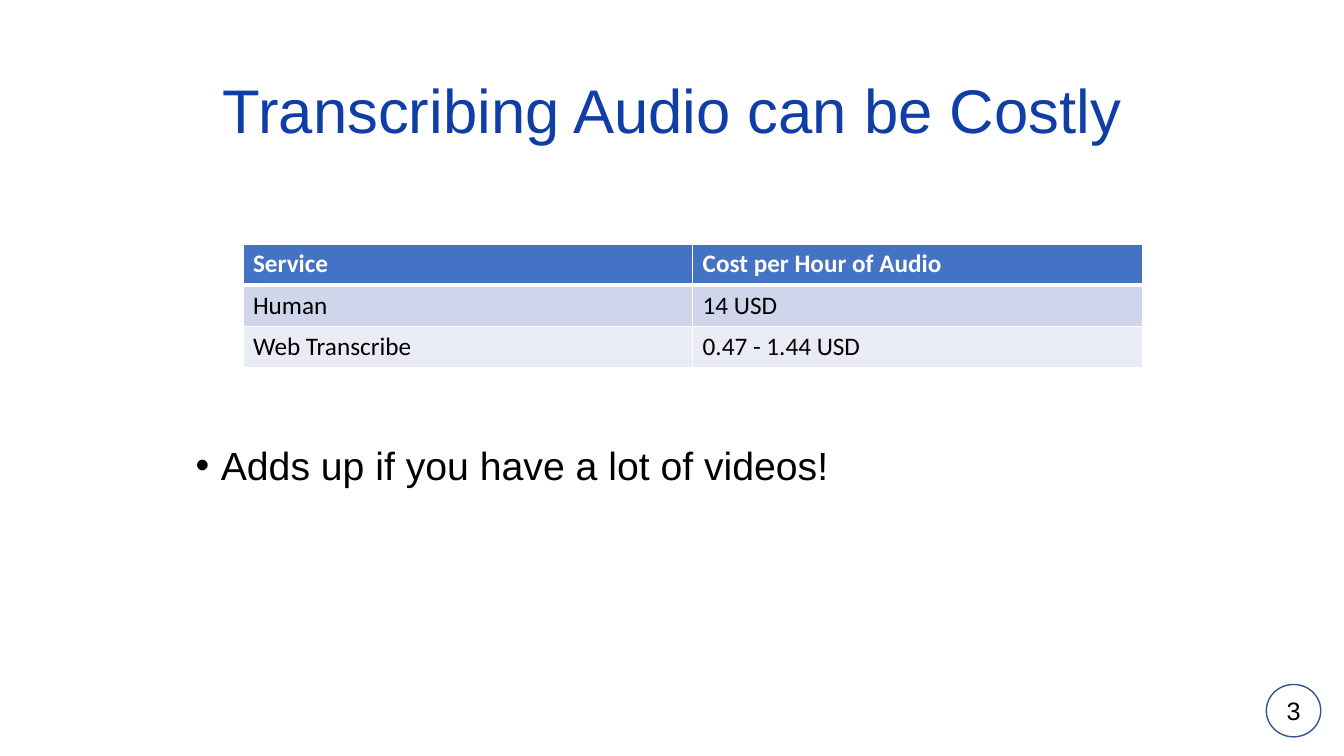
from dataclasses import dataclass

from lxml import etree
from pptx import Presentation
from pptx.dml.color import RGBColor
from pptx.enum.shapes import MSO_SHAPE
from pptx.enum.text import MSO_ANCHOR, MSO_AUTO_SIZE, PP_ALIGN
from pptx.oxml.ns import qn
from pptx.util import Inches, Pt

OVAL = MSO_SHAPE.OVAL
MIDDLE = MSO_ANCHOR.MIDDLE
TOP = MSO_ANCHOR.TOP
CENTER = PP_ALIGN.CENTER
LEFT = PP_ALIGN.LEFT
NO_AUTOFIT = MSO_AUTO_SIZE.NONE


@dataclass(frozen=True)
class Theme:
    text_font: str = "Arial"
    table_font: str = "Calibri"
    title_color: str = "103EA7"
    text_color: str = "000000"
    white: str = "FFFFFF"
    header_fill: str = "4472C4"
    band_fills: tuple = ("CFD5EA", "E9EBF5")
    badge_line: str = "325491"
    title_size: int = 44
    body_size: int = 28
    small_size: int = 18


THEME = Theme()

COST_ROWS = [
    ("Service", "Cost per Hour of Audio"),
    ("Human", "14 USD"),
    ("Web Transcribe", "0.47 - 1.44 USD"),
]


def set_attributes(target, values):
    for name, value in values.items():
        setattr(target, name, value)


def place(shape, left, top, width, height):
    set_attributes(shape, {
        "left": Inches(left), "top": Inches(top),
        "width": Inches(width), "height": Inches(height),
    })


def write_text(text_frame, text, size, color, font=THEME.text_font,
               bold=False, **paragraph_format):
    paragraph = text_frame.paragraphs[0]
    paragraph.text = text
    set_attributes(paragraph, paragraph_format)
    run_font = paragraph.runs[0].font
    set_attributes(run_font, {"name": font, "size": Pt(size), "bold": bold})
    run_font.color.rgb = RGBColor.from_string(color)


def add_bullet(paragraph, indent):
    properties = paragraph._p.get_or_add_pPr()
    properties.set("marL", str(Inches(indent)))
    properties.set("indent", str(-Inches(indent)))
    etree.SubElement(properties, qn("a:buFont")).set("typeface", THEME.text_font)
    etree.SubElement(properties, qn("a:buChar")).set("char", "•")


def fill_title(slide, text):
    title = slide.shapes.title
    place(title, 0.92, 0.4, 11.5, 1.45)
    set_attributes(title.text_frame, {
        "auto_size": NO_AUTOFIT, "vertical_anchor": MIDDLE, "word_wrap": True,
    })
    write_text(title.text_frame, text, THEME.title_size, THEME.title_color,
               alignment=CENTER, line_spacing=0.9)


def fill_body(slide, text):
    body = slide.placeholders[1]
    place(body, 1.84, 3.75, 10.58, 3)
    set_attributes(body.text_frame, {
        "auto_size": NO_AUTOFIT, "vertical_anchor": TOP, "word_wrap": True,
        "margin_top": Inches(0.68),
    })
    add_bullet(body.text_frame.paragraphs[0], 0.25)
    write_text(body.text_frame, text, THEME.body_size, THEME.text_color,
               alignment=LEFT, line_spacing=0.9, space_before=Pt(0))


def set_borders(cell, widths):
    properties = cell._tc.get_or_add_tcPr()
    for side, width in widths.items():
        line = etree.SubElement(properties, qn(f"a:ln{side}"), w=str(Pt(width)))
        fill = etree.SubElement(line, qn("a:solidFill"))
        etree.SubElement(fill, qn("a:srgbClr"), val=THEME.white)


def add_cost_table(slide, rows):
    row_height, column_width = 0.41, 4.46
    table = slide.shapes.add_table(
        len(rows), len(rows[0]), Inches(2.41), Inches(2.42),
        Inches(column_width * len(rows[0])), Inches(row_height * len(rows)),
    ).table
    for row_index, values in enumerate(rows):
        is_header = row_index == 0
        fill = THEME.header_fill if is_header else THEME.band_fills[(row_index - 1) % 2]
        color = THEME.white if is_header else THEME.text_color
        borders = {"L": 1, "R": 1, "T": 3 if row_index == 1 else 1,
                   "B": 3 if is_header else 1}
        for column_index, value in enumerate(values):
            cell = table.cell(row_index, column_index)
            set_borders(cell, borders)
            cell.fill.solid()
            cell.fill.fore_color.rgb = RGBColor.from_string(fill)
            write_text(cell.text_frame, value, THEME.small_size, color,
                       font=THEME.table_font, bold=is_header)


def add_page_badge(slide, number):
    badge = slide.shapes.add_shape(
        OVAL, Inches(12.56), Inches(6.79), Inches(0.54), Inches(0.52))
    badge.shadow.inherit = False
    badge.fill.solid()
    badge.fill.fore_color.rgb = RGBColor.from_string(THEME.white)
    badge.line.color.rgb = RGBColor.from_string(THEME.badge_line)
    badge.line.width = Pt(1)
    set_attributes(badge.text_frame, {
        "vertical_anchor": MIDDLE, "word_wrap": False,
        "margin_left": 0, "margin_right": 0,
    })
    write_text(badge.text_frame, number, THEME.small_size, THEME.text_color,
               alignment=CENTER)


def main():
    presentation = Presentation()
    set_attributes(presentation, {
        "slide_width": Inches(13.33), "slide_height": Inches(7.5),
    })
    slide = presentation.slides.add_slide(presentation.slide_layouts[1])
    add_page_badge(slide, "3")
    fill_title(slide, "Transcribing Audio can be Costly")
    fill_body(slide, "Adds up if you have a lot of videos!")
    add_cost_table(slide, COST_ROWS)
    presentation.save("out.pptx")


if __name__ == "__main__":
    main()
